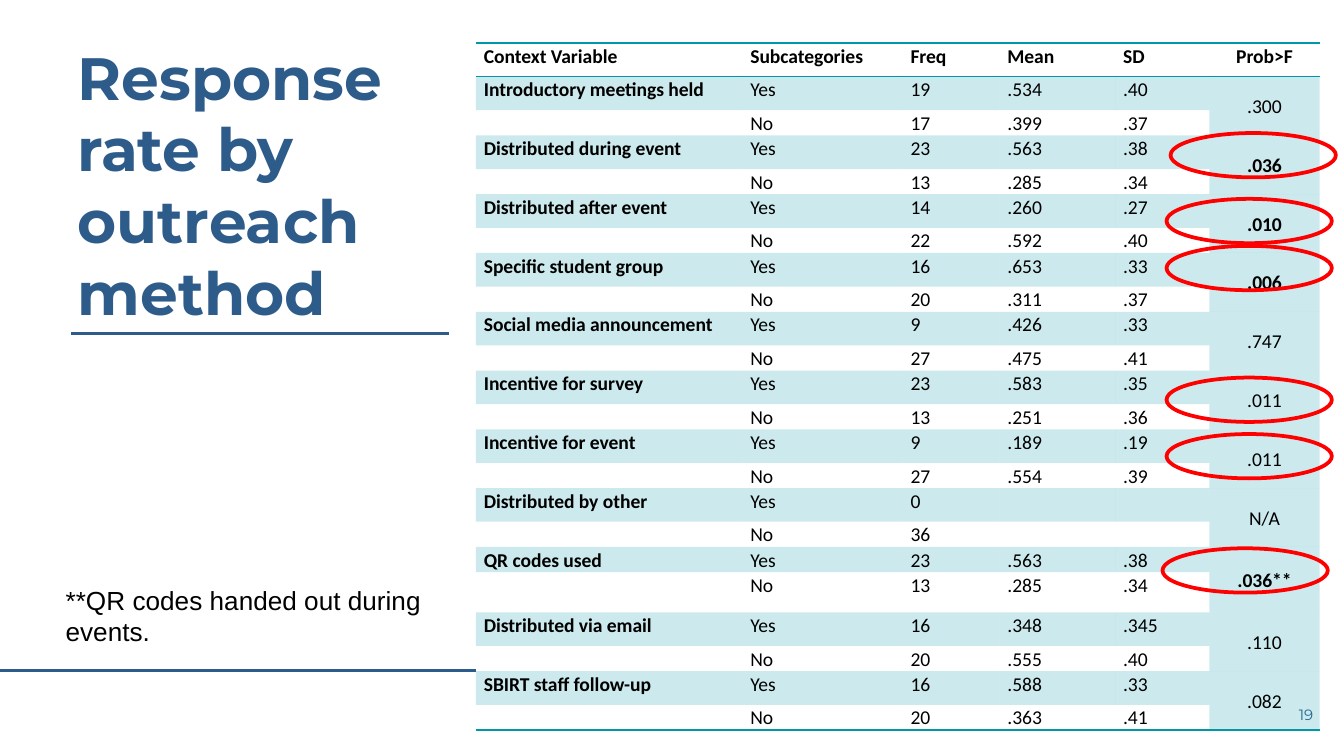
from lxml import etree
from pptx import Presentation, util as u
from pptx.dml.color import RGBColor
from pptx.enum import shapes, text
from pptx.oxml import ns

WIDE = 10
HIGH = WIDE * 9 / 16
NAVY, TEAL, RED, BLACK = "2D5B8A", "0097A7", "FF0000", "000000"
NO_GRID = "{2D5ABB26-0587-4C30-8999-92F81FD0307C}"

# Content
TITLE = "Response rate by outreach method"
NOTE = "**QR codes handed out during events."
HEAD = ["Context Variable", "Subcategories", "Freq", "Mean", "SD", "Prob>F"]
# variable, (freq, mean, sd) for Yes, the same for No, probability, bold
DATA = [
    ("Introductory meetings held", ("19", ".534", ".40"), ("17", ".399", ".37"), ".300", False),
    ("Distributed during event", ("23", ".563", ".38"), ("13", ".285", ".34"), ".036", True),
    ("Distributed after event", ("14", ".260", ".27"), ("22", ".592", ".40"), ".010", True),
    ("Specific student group", ("16", ".653", ".33"), ("20", ".311", ".37"), ".006", True),
    ("Social media announcement", ("9", ".426", ".33"), ("27", ".475", ".41"), ".747", False),
    ("Incentive for survey", ("23", ".583", ".35"), ("13", ".251", ".36"), ".011", False),
    ("Incentive for event", ("9", ".189", ".19"), ("27", ".554", ".39"), ".011", False),
    ("Distributed by other", ("0", "", ""), ("36", "", ""), "N/A", False),
    ("QR codes used", ("23", ".563", ".38"), ("13", ".285", ".34"), ".036**", True),
    ("Distributed via email", ("16", ".348", ".345"), ("20", ".555", ".40"), ".110", False),
    ("SBIRT staff follow-up", ("16", ".588", ".33"), ("20", ".363", ".41"), ".082", False),
]
SPAN = 6.28  # table width, shared out by column
COLS = [1.98, 1.19, 0.72, 0.86, 0.7, 0.82]
TALL, LOW = 0.25, 0.12
ODD = {"QR codes used": (LOW, 0.3)}  # row pair with its own heights
RINGS = [(8.68, 1.83), (8.68, 2.81), (8.68, 3.23), (8.65, 4.08), (8.68, 1.48)]
TOP_RING = (8.71, 0.99)
RULES = [(-0.01, 3.54, 4.99), (0.53, 3.34, 2.48)]  # left, right, height

deck = Presentation()
deck.slide_width, deck.slide_height = u.Inches(WIDE), u.Inches(HIGH)
slide = deck.slides.add_slide(deck.slide_layouts[6])


def color(code):
    return RGBColor.from_string(code)


def write(frame, words, size=10.5, font="Calibri", ink=BLACK, bold=False,
          align=None, space=None):
    para = frame.paragraphs[0]
    para.alignment, para.line_spacing = align, space
    if not words:  # an empty cell keeps the row as low as its text
        para._p.get_or_add_endParaRPr().set("sz", str(int(size * 100)))
        return
    run = para.add_run()
    run.text = words
    run.font.size, run.font.name, run.font.bold = u.Pt(size), font, bold
    run.font.color.rgb = color(ink)


def box(words, x, y, w, h, pad=0.1, anchor=text.MSO_ANCHOR.TOP, **look):
    frame = slide.shapes.add_textbox(*map(u.Inches, (x, y, w, h))).text_frame
    frame.word_wrap = True
    frame.vertical_anchor = anchor
    frame.margin_left = frame.margin_right = u.Inches(0.1)
    frame.margin_top = frame.margin_bottom = u.Inches(pad)
    write(frame, words, **look)


def rule(left, right, y):
    line = slide.shapes.add_connector(
        shapes.MSO_CONNECTOR.STRAIGHT, *map(u.Inches, (left, y, right, y)))
    line.line.color.rgb, line.line.width = color(NAVY), u.Pt(1.5)
    etree.SubElement(line._element.spPr, ns.qn("a:effectLst"))


def ring(x, y):
    oval = slide.shapes.add_shape(
        shapes.MSO_SHAPE.OVAL, *map(u.Inches, (x, y, 1.23, 0.33)))
    oval.shadow.inherit = False
    oval.fill.background()
    oval.line.color.rgb, oval.line.width = color(RED), u.Pt(2)


def edge(cell, *sides):
    for i, side in enumerate(sides):
        line = etree.Element(ns.qn("a:ln" + side), w=str(u.Pt(1)))
        fill = etree.SubElement(line, ns.qn("a:solidFill"))
        etree.SubElement(fill, ns.qn("a:srgbClr"), val=TEAL)
        cell._tc.get_or_add_tcPr().insert(i, line)


def put(cell, words, tint=False, **look):
    cell.margin_left = cell.margin_right = u.Inches(0.06)
    cell.margin_top = cell.margin_bottom = 0
    write(cell.text_frame, words, space=1.07, **look)
    if tint:
        cell.fill.solid()
        cell.fill.fore_color.rgb = color(TEAL)
        tone = cell._tc.tcPr.find(".//" + ns.qn("a:srgbClr"))
        etree.SubElement(tone, ns.qn("a:alpha"), val="20000")
    else:
        cell.fill.background()


# Title, rules and page number
rule(*RULES[0])
box(TITLE, 0.48, 0.2, 3.07, 1.78, size=32, font="Montserrat", ink=NAVY, bold=True)
rule(*RULES[1])
box("19", 9.27, 5.1, 0.6, 0.43, anchor=text.MSO_ANCHOR.MIDDLE, size=8,
    font="Montserrat", ink=NAVY, align=text.PP_ALIGN.RIGHT)

# Table frame
highs = [TALL] + [h for row in DATA for h in ODD.get(row[0], (TALL, LOW))]
grid = slide.shapes.add_table(
    len(highs), len(COLS),
    *map(u.Inches, (3.54, 0.32, SPAN, sum(highs)))).table
grid.first_row = grid.horz_banding = False
grid._tbl.tblPr.find(ns.qn("a:tableStyleId")).text = NO_GRID
for col, w in zip(grid.columns, COLS):
    col.width = u.Inches(SPAN * w / sum(COLS))
for row, h in zip(grid.rows, highs):
    row.height = u.Inches(h)

# Table cells: a header, then a Yes and a No row for each variable
mid = text.PP_ALIGN.CENTER
last = len(COLS) - 1
for c, name in enumerate(HEAD):
    put(grid.cell(0, c), name, bold=True, align=mid if c == last else None)
    edge(grid.cell(0, c), "T", "B")
for i, (name, yes, no, prob, strong) in enumerate(DATA):
    r = 1 + 2 * i
    for c, words in enumerate((name, "Yes", *yes)):
        put(grid.cell(r, c), words, tint=True, bold=c == 0)
    for c, words in enumerate(("", "No", *no, "")):
        put(grid.cell(r + 1, c), words)
    odds = grid.cell(r, last)
    put(odds, prob, tint=True, bold=strong, align=mid)
    odds.vertical_anchor = text.MSO_ANCHOR.MIDDLE
    odds.merge(grid.cell(r + 1, last))
edge(odds, "B")
for c in range(len(COLS)):
    edge(grid.cell(len(highs) - 1, c), "B")

# Rings round the notable values, and the footnote
for spot in RINGS:
    ring(*spot)
box(NOTE, 0.39, 4.3, 3.24, 0.57, pad=0.05, size=14, font="Arial")
ring(*TOP_RING)

deck.save("out.pptx")
